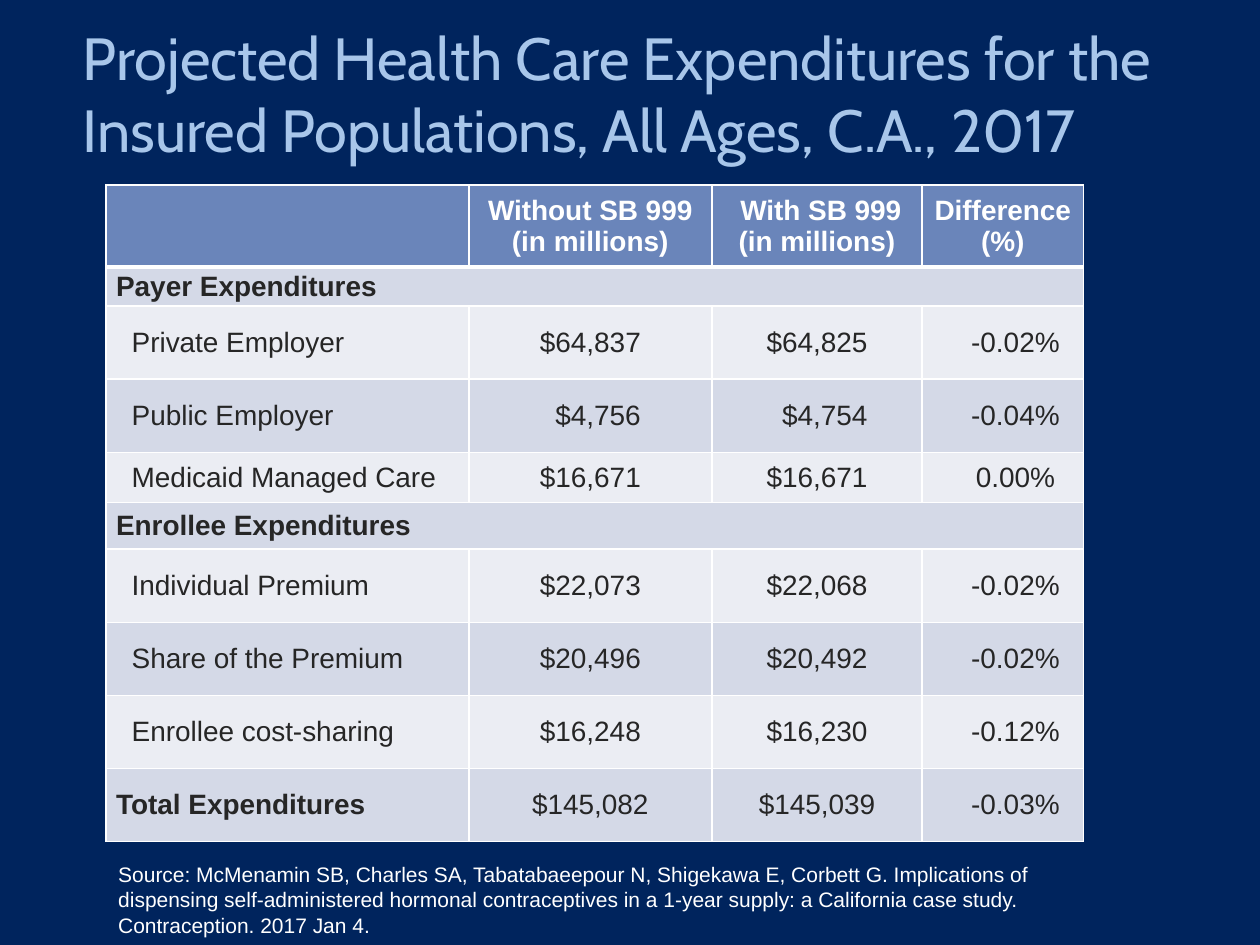
from pptx import Presentation
from pptx.dml.color import RGBColor
from pptx.enum.text import MSO_ANCHOR, MSO_AUTO_SIZE, PP_ALIGN
from pptx.oxml import parse_xml
from pptx.oxml.ns import nsdecls
from pptx.util import Pt

COLORS = {
    "background": "00245D",
    "title": "A8C6EA",
    "white": "FFFFFF",
    "body": "262626",
    "header": "6A85BA",
    "dark_band": "D4D9E7",
    "light_band": "EBEDF3",
}
TITLE = {"name": "Cabin", "size": Pt(34)}
SOURCE = {"name": "Arial", "size": Pt(12)}
CELL = {"name": "Arial", "size": Pt(16), "bold": False}
BOLD = {**CELL, "bold": True}
MARGINS = {
    "margin_left": Pt(1.44),
    "margin_right": Pt(1.44),
    "margin_top": Pt(0.72),
    "margin_bottom": Pt(0.72),
    "vertical_anchor": MSO_ANCHOR.MIDDLE,
}
SPACE = 4.45

COLUMNS = [207.4, 138.9, 120.2, 92.2]
HEIGHTS = [46.8, 22.3, 41.8, 41.8, 28.8, 26.6, 41.8, 41.8, 41.8, 41.8]
ROWS = [
    ["", "Without SB 999\v(in millions)", " With SB 999\v(in millions)", "Difference (%)"],
    ["Payer Expenditures"],
    ["Private Employer", "$64,837", "$64,825", "-0.02%"],
    ["Public Employer", "$4,756", "$4,754", "-0.04%"],
    ["Medicaid Managed Care", "$16,671", "$16,671", "0.00%"],
    ["Enrollee Expenditures"],
    ["Individual Premium", "$22,073", "$22,068", "-0.02%"],
    ["Share of the Premium", "$20,496", "$20,492", "-0.02%"],
    ["Enrollee cost-sharing", "$16,248", "$16,230", "-0.12%"],
    ["Total Expenditures", "$145,082", "$145,039", "-0.03%"],
]


def apply(target, values):
    for name, value in values.items():
        setattr(target, name, value)


class Deck:
    def __init__(self):
        self.prs = Presentation()
        apply(self.prs, {"slide_width": Pt(720), "slide_height": Pt(540)})
        self.s = self.prs.slides.add_slide(self.prs.slide_layouts[6])
        self.fill(self.s.background, "background")

    def fill(self, target, color):
        target.fill.solid()
        target.fill.fore_color.rgb = RGBColor.from_string(COLORS[color])

    def paragraph(self, tf, text, font, color, align=PP_ALIGN.LEFT, indent=0):
        p = tf.paragraphs[0]
        p.text = text
        p.alignment = align
        if indent:
            p._p.get_or_add_pPr().set("marL", str(Pt(indent)))
        for r in p.runs:
            apply(r.font, font)
            r.font.color.rgb = RGBColor.from_string(COLORS[color])

    def text(self, box, text, font, color):
        sp = self.s.shapes.add_textbox(*map(Pt, box))
        tf = sp.text_frame
        apply(tf, {"word_wrap": True, "auto_size": MSO_AUTO_SIZE.SHAPE_TO_FIT_TEXT})
        self.paragraph(tf, text, font, color)

    def borders(self, cell, top, bottom):
        tcPr = cell._tc.get_or_add_tcPr()
        for side, width in {"L": 1, "R": 1, "T": top, "B": bottom}.items():
            tcPr.append(parse_xml(
                f'<a:ln{side} {nsdecls("a")} w="{Pt(width)}"><a:solidFill>'
                f'<a:srgbClr val="{COLORS["white"]}"/></a:solidFill></a:ln{side}>'))

    def table(self, left, top):
        frame = self.s.shapes.add_table(
            len(ROWS), len(COLUMNS), Pt(left), Pt(top), Pt(sum(COLUMNS)), Pt(sum(HEIGHTS)))
        table = frame.table
        apply(table, {"first_row": False, "horz_banding": False})
        for column, width in zip(table.columns, COLUMNS):
            column.width = Pt(width)
        for i, (row, height, values) in enumerate(zip(table.rows, HEIGHTS, ROWS)):
            row.height = Pt(height)
            band = "header" if i == 0 else "dark_band" if i % 2 else "light_band"
            for cell in row.cells:
                apply(cell, MARGINS)
                self.borders(cell, 3 if i == 1 else 1, 3 if i == 0 else 1)
                self.fill(cell, band)
            if len(values) == 1:
                row.cells[0].merge(row.cells[3])
            for j, value in enumerate(values):
                if value:
                    self.cell(row.cells[j], i, j, value)

    def cell(self, cell, i, j, value):
        heading = i in (1, 5, 9)
        if i == 0:
            style = BOLD, "white", PP_ALIGN.CENTER
        elif j == 0:
            style = (BOLD if heading else CELL), "body", PP_ALIGN.LEFT, SPACE * (1 if heading else 3)
        else:
            indent = 14.4 if j == 3 else 2 * SPACE if len(value) == 6 else 0
            style = CELL, "body", PP_ALIGN.CENTER, indent
        self.paragraph(cell.text_frame, value, *style)


def main():
    deck = Deck()
    deck.text(
        (40.3, 8.6, 658.8, 90),
        "Projected Health Care Expenditures for the Insured Populations, All Ages, C.A., 2017",
        TITLE, "title")
    deck.table(60.5, 105.8)
    deck.text(
        (60.5, 488.9, 583.2, 51.1),
        "Source: McMenamin SB, Charles SA, Tabatabaeepour N, Shigekawa E, Corbett G. "
        "Implications of dispensing self-administered hormonal contraceptives in a 1-year "
        "supply: a California case study. Contraception. 2017 Jan 4.",
        SOURCE, "white")
    deck.prs.save("out.pptx")


if __name__ == "__main__":
    main()
